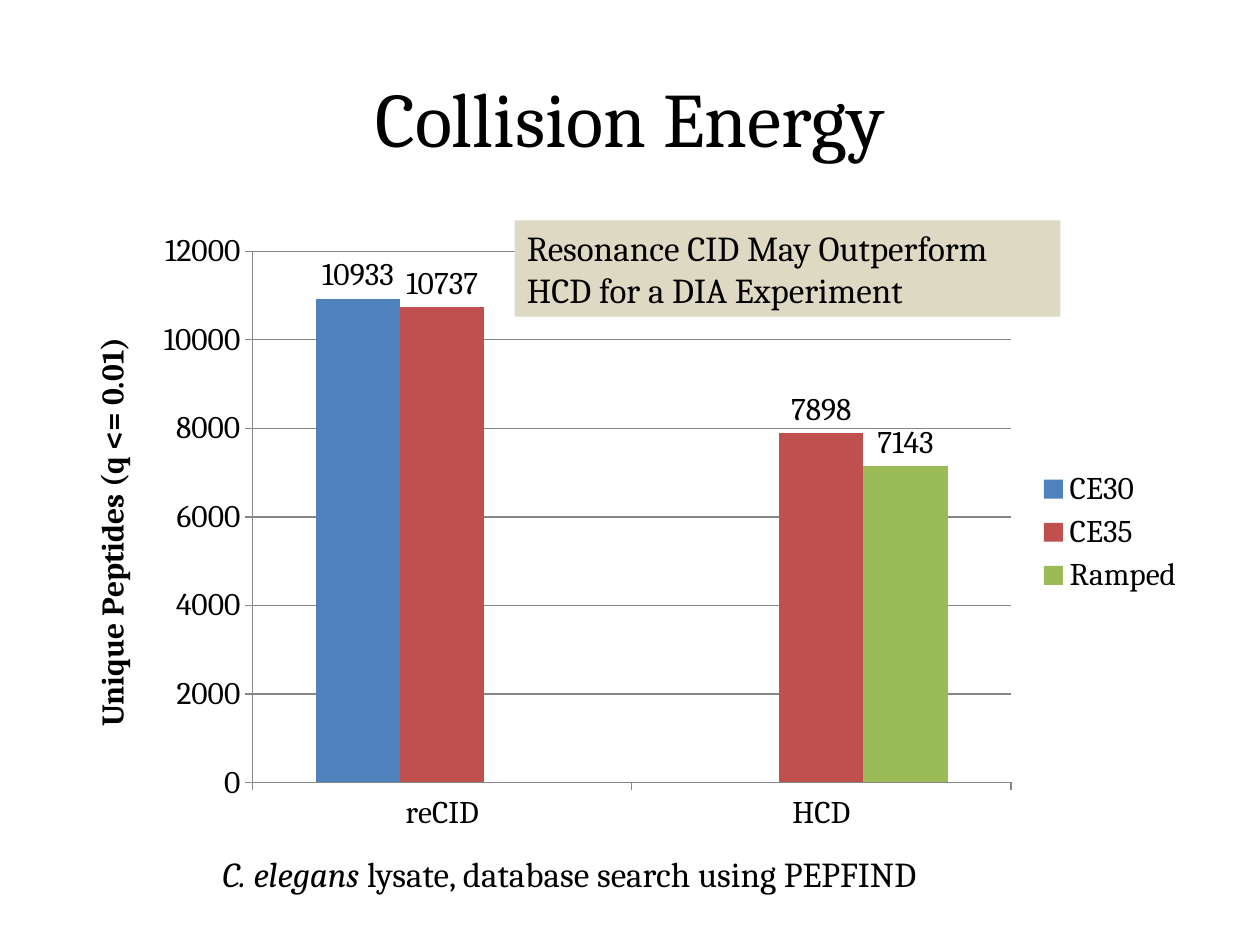
"""Build a slide comparing peptide counts by collision energy."""
import pptx
import pptx.chart.data
import pptx.dml.color
import pptx.enum.chart
import pptx.enum.shapes
import pptx.enum.text
import pptx.util

Pt = pptx.util.Pt
RGBColor = pptx.dml.color.RGBColor

FONT = "Cambria"
BLACK = RGBColor(0x00, 0x00, 0x00)
GRAY = RGBColor(0x86, 0x86, 0x86)
TAN = RGBColor(0xDD, 0xD9, 0xC3)
BLUE = RGBColor(0x4F, 0x81, 0xBD)
RED = RGBColor(0xC0, 0x50, 0x4D)
GREEN = RGBColor(0x9B, 0xBB, 0x59)


def style_font(font, size, bold=False):
    font.name = FONT
    font.size = Pt(size)
    font.bold = bold
    font.color.rgb = BLACK


def write_text(shape, text, size, alignment):
    text_frame = shape.text_frame
    text_frame.word_wrap = True
    text_frame.vertical_anchor = pptx.enum.text.MSO_ANCHOR.MIDDLE
    paragraph = text_frame.paragraphs[0]
    paragraph.text = text
    paragraph.alignment = alignment
    style_font(paragraph.runs[0].font, size)
    return paragraph


presentation = pptx.Presentation()
presentation.slide_width = Pt(720)
presentation.slide_height = Pt(540)
slide = presentation.slides.add_slide(presentation.slide_layouts[6])
left = pptx.enum.text.PP_ALIGN.LEFT
center = pptx.enum.text.PP_ALIGN.CENTER

title = slide.shapes.add_textbox(Pt(36), Pt(21.6), Pt(648), Pt(90))
write_text(title, "Collision Energy", 44, center)

peptide_counts = [
    ("CE30", (10933, None), BLUE),
    ("CE35", (10737, 7898), RED),
    ("Ramped", (None, 7143), GREEN),
]
chart_data = pptx.chart.data.CategoryChartData()
chart_data.categories = ["reCID", "HCD"]
for name, values, color in peptide_counts:
    chart_data.add_series(name, values)

chart = slide.shapes.add_chart(
    pptx.enum.chart.XL_CHART_TYPE.COLUMN_CLUSTERED,
    Pt(36), Pt(126), Pt(648), Pt(356.4), chart_data,
).chart
style_font(chart.font, 18)
chart.has_title = False
chart.has_legend = True
chart.legend.position = pptx.enum.chart.XL_LEGEND_POSITION.RIGHT
chart.legend.include_in_layout = False

plot = chart.plots[0]
plot.gap_width = 150
plot.overlap = 0
plot.vary_by_categories = False
for series, (name, values, color) in zip(plot.series, peptide_counts):
    series.invert_if_negative = False
    series.format.fill.solid()
    series.format.fill.fore_color.rgb = color
    labels = series.data_labels
    labels.show_value = True
    labels.position = pptx.enum.chart.XL_LABEL_POSITION.OUTSIDE_END
    style_font(labels.font, 18)

value_axis = chart.value_axis
value_axis.minimum_scale = 0
value_axis.maximum_scale = 12000
value_axis.major_unit = 2000
value_axis.has_major_gridlines = True
value_axis.major_gridlines.format.line.color.rgb = GRAY
axis_title = value_axis.axis_title.text_frame.paragraphs[0]
axis_title.text = "Unique Peptides (q <= 0.01)"
style_font(axis_title.runs[0].font, 18, bold=True)
for axis in (chart.category_axis, value_axis):
    axis.major_tick_mark = pptx.enum.chart.XL_TICK_MARK.OUTSIDE
    axis.format.line.color.rgb = GRAY
    style_font(axis.tick_labels.font, 18)

callout = slide.shapes.add_shape(
    pptx.enum.shapes.MSO_SHAPE.RECTANGLE, Pt(294), Pt(126), Pt(312), Pt(55)
)
callout.shadow.inherit = False
callout.fill.solid()
callout.fill.fore_color.rgb = TAN
callout.line.fill.background()
write_text(callout, "Resonance CID May Outperform HCD for a DIA Experiment", 20, left)

caption = slide.shapes.add_textbox(Pt(120), Pt(483.5), Pt(582), Pt(31.5))
caption_paragraph = write_text(caption, "C. elegans ", 20, left)
caption_paragraph.runs[0].font.italic = True
sample_run = caption_paragraph.add_run()
sample_run.text = "lysate, database search using PEPFIND"
style_font(sample_run.font, 20)

presentation.save("out.pptx")
